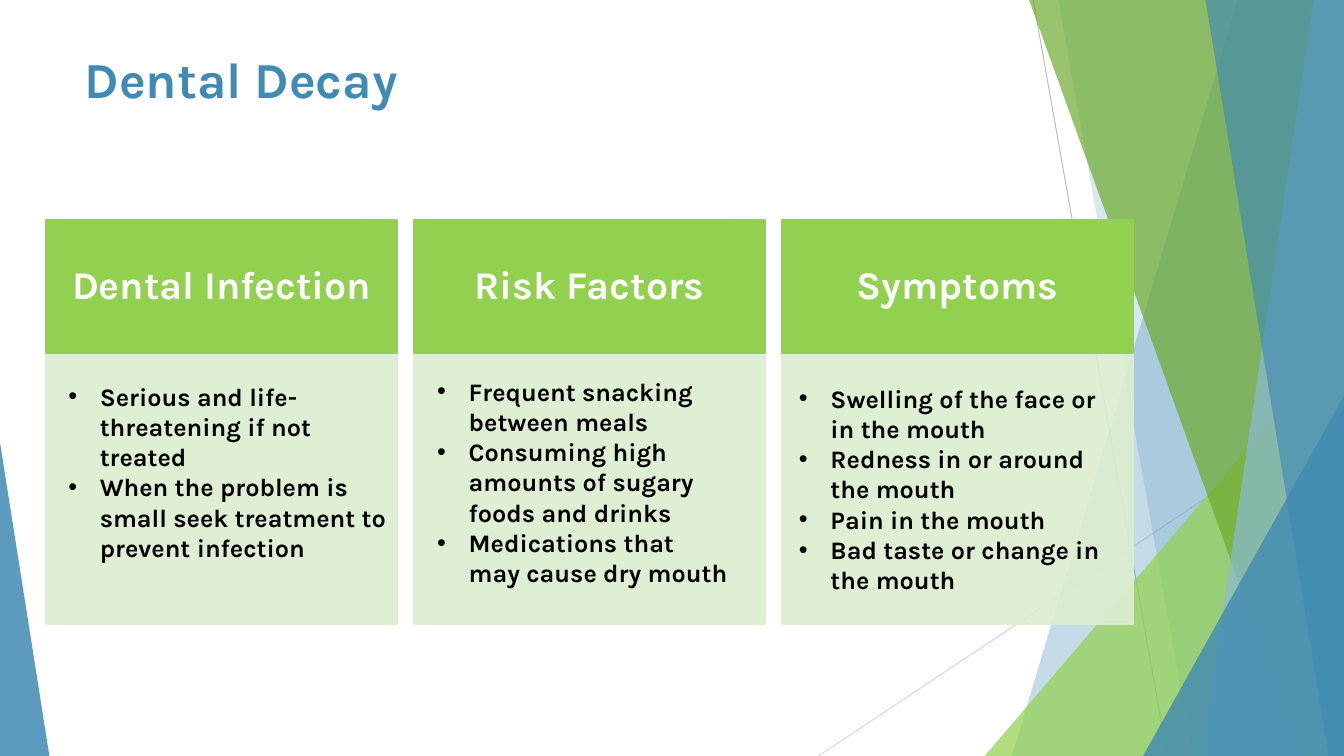
import pptx
import pptx.util
import pptx.dml.color
import pptx.enum.shapes
import pptx.enum.text
import pptx.oxml.ns
from lxml import etree

Pt = pptx.util.Pt
SHAPE = pptx.enum.shapes.MSO_SHAPE
ANCHOR = pptx.enum.text.MSO_ANCHOR
ALIGN = pptx.enum.text.PP_ALIGN
qn = pptx.oxml.ns.qn

W, H = 960, 540
COLORS = {
    "blue": "418AB3", "pale_blue": "8ABAD4", "green": "92D050",
    "dark_green": "6EAA2E", "panel": "DCEED0", "white": "FFFFFF",
    "black": "000000", "grey": "BFBFBF", "light_grey": "D9D9D9",
}
TITLE = {"size": Pt(36), "bold": True, "name": "Karla"}
HEADING = {**TITLE, "size": Pt(28)}
BODY = {**TITLE, "size": Pt(18)}
BULLET_INDENT = 22.5

# Bands reach from the top edge to the bottom edge: top x, bottom x, colour, opacity.
# Triangles sit on the bottom edge: left, width, height, peak, colour, opacity.
BACKDROP = [
    ("band", (884.2, 722.9), "blue", 30),
    ("band", (756, 851.8), "blue", 20),
    ("triangle", (703.4, 256.6, 300.2, 1), "green", 72),
    ("band", (735.1, 929.5), "dark_green", 70),
    ("band", (938.2, 858.2), "pale_blue", 70),
    ("band", (861.1, 949), "blue", 65),
    ("triangle", (816.5, 143.5, 257, 1), "blue", 80),
    ("triangle", (0, 35.3, 223.9, 0), "blue", 85),
]

# Heading, text box relative to the panel, insets, bullets.
COLUMNS = [
    ("Dental Infection", (7.2, 11.5, 250.6, 193.7), (8.6, 8.6, 11.5, 12.2), [
        "Serious and life-threatening if not treated",
        "When the problem is small seek treatment to prevent infection",
    ]),
    ("Risk Factors", (9.4, 13, 222.5, 159.8), (7.2, 3.6, 7.2, 3.6), [
        "Frequent snacking between meals",
        "Consuming high amounts of sugary foods and drinks",
        "Medications that may cause dry mouth",
    ]),
    ("Symptoms", (5, 18, 229, 159.8), (7.2, 3.6, 7.2, 3.6), [
        "Swelling of the face or in the mouth",
        "Redness in or around the mouth",
        "Pain in the mouth",
        "Bad taste or change in the mouth",
    ]),
]


def rgb(name):
    return pptx.dml.color.RGBColor.from_string(COLORS[name])


def paint(fill, color, opacity=100):
    fill.solid()
    fill.fore_color.rgb = rgb(color)
    if opacity < 100:
        clr = next(fill._xPr.iter(qn("a:srgbClr")))
        etree.SubElement(clr, qn("a:alpha"), val=str(opacity * 1000))


def style(sp, color, opacity=100, outline=False):
    sp.shadow.inherit = False
    paint(sp.fill, color, opacity)
    if outline:
        sp.line.width = Pt(1.5)
        paint(sp.line.fill, color, opacity)
    else:
        sp.line.fill.background()


def add_rect(s, box, color, opacity=100):
    sp = s.shapes.add_shape(SHAPE.RECTANGLE, *map(Pt, box))
    style(sp, color, opacity, outline=True)
    return sp


def set_frame(tf, insets, anchor=ANCHOR.TOP):
    tf.word_wrap = True
    tf.vertical_anchor = anchor
    for side, inset in zip(("left", "top", "right", "bottom"), insets):
        setattr(tf, f"margin_{side}", Pt(inset))


def write(p, text, fmt, color):
    r = p.add_run()
    r.text = text
    for key, value in fmt.items():
        setattr(r.font, key, value)
    r.font.color.rgb = rgb(color)


def add_bullet(p):
    pPr = p._p.get_or_add_pPr()
    pPr.set("marL", str(Pt(BULLET_INDENT)))
    pPr.set("indent", str(-Pt(BULLET_INDENT)))
    etree.SubElement(pPr, qn("a:buFont"), typeface="Arial")
    etree.SubElement(pPr, qn("a:buChar"), char="•")


def add_hairline(s, start, end, color):
    line = s.shapes.add_connector(pptx.enum.shapes.MSO_CONNECTOR.STRAIGHT,
                                  *map(Pt, start + end))
    line.line.width = Pt(0.75)
    line.line.color.rgb = rgb(color)
    etree.SubElement(line._element.spPr, qn("a:effectLst"))


def add_band(s, top_x, bottom_x):
    corners = [(Pt(x), Pt(y)) for x, y in
               ((top_x, 0), (W, 0), (W, H), (bottom_x, H))]
    builder = s.shapes.build_freeform(*corners[0])
    builder.add_line_segments(corners[1:], close=True)
    return builder.convert_to_shape()


def add_triangle(s, left, width, height, peak):
    sp = s.shapes.add_shape(SHAPE.ISOSCELES_TRIANGLE, Pt(left), Pt(H - height),
                            Pt(width), Pt(height))
    sp.adjustments[0] = peak
    return sp


def add_backdrop(s):
    add_hairline(s, (738, 0), (833.8, H), "grey")
    add_hairline(s, (W, 290.2), (584.6, H), "light_grey")
    makers = {"band": add_band, "triangle": add_triangle}
    for kind, geometry, color, opacity in BACKDROP:
        style(makers[kind](s, *geometry), color, opacity)


def add_title(s, box, text):
    tf = s.shapes.add_textbox(*map(Pt, box)).text_frame
    set_frame(tf, (7.2, 3.6, 7.2, 3.6))
    write(tf.paragraphs[0], text, TITLE, "blue")


def add_column(s, box, heading, text_box, insets, bullets):
    """Place a heading bar with a bulleted panel below it."""
    x, y, w, h = box
    head_h = 95
    panel_y = y + head_h
    add_rect(s, (x, panel_y, w, h - head_h), "panel", 90)

    tf = add_rect(s, (x, y, w, head_h), "green").text_frame
    set_frame(tf, (15.6, 8.9, 15.6, 8.9), ANCHOR.MIDDLE)
    p = tf.paragraphs[0]
    p.alignment = ALIGN.CENTER
    p.line_spacing = 0.9
    write(p, heading, HEADING, "white")

    dx, dy, text_w, text_h = text_box
    tf = s.shapes.add_textbox(Pt(x + dx), Pt(panel_y + dy),
                              Pt(text_w), Pt(text_h)).text_frame
    set_frame(tf, insets)
    for i, text in enumerate(bullets):
        p = tf.add_paragraph() if i else tf.paragraphs[0]
        add_bullet(p)
        write(p, text, BODY, "black")


def main():
    prs = pptx.Presentation()
    prs.slide_width, prs.slide_height = Pt(W), Pt(H)
    s = prs.slides.add_slide(prs.slide_layouts[6])
    add_backdrop(s)
    add_title(s, (53.3, 31, 676.8, 103.7), "Dental Decay")
    left, top, width, height, step = 33, 157, 250.6, 288.7, 262.8
    for i, column in enumerate(COLUMNS):
        add_column(s, (left + i * step, top, width, height), *column)
    prs.save("out.pptx")


if __name__ == "__main__":
    main()
